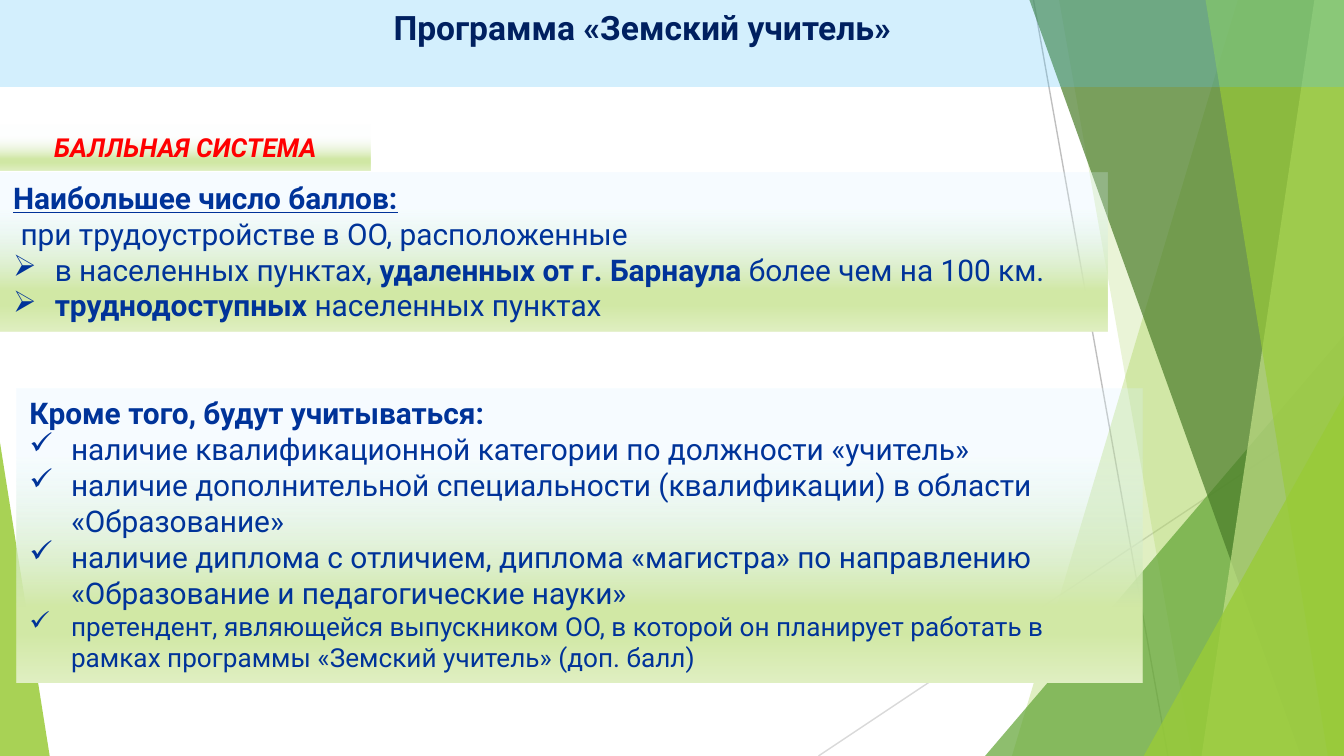
from lxml import etree
from pptx import Presentation
from pptx.dml.color import RGBColor
from pptx.enum.shapes import MSO_CONNECTOR, MSO_SHAPE
from pptx.enum.text import MSO_ANCHOR, MSO_AUTO_SIZE, PP_ALIGN
from pptx.oxml.ns import qn
from pptx.util import Inches, Pt

STRAIGHT = MSO_CONNECTOR.STRAIGHT
RECTANGLE = MSO_SHAPE.RECTANGLE
TRIANGLE = MSO_SHAPE.ISOSCELES_TRIANGLE
TOP = MSO_ANCHOR.TOP
GROW = MSO_AUTO_SIZE.SHAPE_TO_FIT_TEXT
LEFT, CENTER = PP_ALIGN.LEFT, PP_ALIGN.CENTER

LIME, GREEN, FOREST, PALE = "99CB38", "63A537", "4A7C29", "C2E088"
SKY, NAVY, BLUE, RED = "51C3F9", "002060", "003399", "FF0000"
MEADOW = [(74, "D1E8A5", 100), (83, "D1E8A5", 100), (100, "E0EFC3", 100)]
PANEL_FADE = [(23, "DCF3FE", 25)] + MEADOW
LABEL_FADE = [(24, "F8FCFD", 13)] + MEADOW
ARROW, CHECK = "➢", "✓"


def rgb(value):
    return RGBColor.from_string(value)


class SlideKit:
    font = "Roboto"
    indent = Inches(0.31)

    def __init__(self, deck):
        self.width, self.height = deck.slide_width, deck.slide_height
        self.slide = deck.slides.add_slide(deck.slide_layouts[6])
        self.shapes = self.slide.shapes

    def x(self, percent):
        return round(self.width * percent / 100)

    def y(self, percent):
        return round(self.height * percent / 100)

    def place(self, left, top, width, height):
        return self.x(left), self.y(top), self.x(width), self.y(height)

    def line(self, start, end, color):
        rule = self.shapes.add_connector(
            STRAIGHT, self.x(start[0]), self.y(start[1]), self.x(end[0]), self.y(end[1]))
        rule.line.color.rgb = rgb(color)
        rule.line.width = Pt(0.75)
        etree.SubElement(rule._element.spPr, qn("a:effectLst"))

    def paint(self, shape, color, opacity):
        shape.shadow.inherit = False
        shape.line.fill.background()
        shape.fill.solid()
        shape.fill.fore_color.rgb = rgb(color)
        tint = shape._element.spPr.find(qn("a:solidFill"))[0]
        etree.SubElement(tint, qn("a:alpha"), val=str(opacity * 1000))

    def band(self, top_x, bottom_x, color, opacity):
        outline = self.shapes.build_freeform(self.x(top_x), 0)
        corners = [(100, 0), (100, 100), (bottom_x, 100)]
        outline.add_line_segments([(self.x(x), self.y(y)) for x, y in corners])
        self.paint(outline.convert_to_shape(), color, opacity)

    def triangle(self, box, apex, color, opacity):
        facet = self.shapes.add_shape(TRIANGLE, *self.place(*box))
        facet.adjustments[0] = apex
        self.paint(facet, color, opacity)

    def bar(self, box, color, opacity):
        self.paint(self.shapes.add_shape(RECTANGLE, *self.place(*box)), color, opacity)

    def fade(self, shape, stops):
        shape.fill.gradient()
        shape.fill.gradient_angle = 270
        ramp = shape._element.spPr.find(qn("a:gradFill")).find(qn("a:gsLst"))
        for old in list(ramp):
            ramp.remove(old)
        for position, color, opacity in stops:
            stop = etree.SubElement(ramp, qn("a:gs"), pos=str(position * 1000))
            tint = etree.SubElement(stop, qn("a:srgbClr"), val=color)
            etree.SubElement(tint, qn("a:alpha"), val=str(opacity * 1000))

    def add_text(self, frame, paragraphs, color, align):
        frame.word_wrap = True
        frame.vertical_anchor = TOP
        for index, (bullet, size, runs) in enumerate(paragraphs):
            paragraph = frame.add_paragraph() if index else frame.paragraphs[0]
            paragraph.alignment = align
            if bullet:
                props = paragraph._p.get_or_add_pPr()
                props.set("marL", str(self.indent))
                props.set("indent", str(-self.indent))
                etree.SubElement(props, qn("a:buChar"), char=bullet)
            for text, style in runs:
                run = paragraph.add_run()
                run.text = text
                run.font.name = self.font
                run.font.size = Pt(size)
                run.font.color.rgb = rgb(color)
                run.font.bold = "b" in style
                run.font.italic = "i" in style
                run.font.underline = "u" in style

    def heading(self, box, paragraphs, color):
        frame = self.shapes.add_textbox(*self.place(*box)).text_frame
        self.add_text(frame, paragraphs, color, CENTER)

    def panel(self, box, stops, paragraphs, color, align=LEFT):
        block = self.shapes.add_shape(RECTANGLE, *self.place(*box))
        block.shadow.inherit = False
        block.line.fill.background()
        self.fade(block, stops)
        self.add_text(block.text_frame, paragraphs, color, align)
        block.text_frame.auto_size = GROW


def main():
    deck = Presentation()
    deck.slide_width, deck.slide_height = Inches(10), Inches(5.625)
    kit = SlideKit(deck)

    kit.line((76.9, 0), (86.9, 100), "BFBFBF")
    kit.line((100, 53.7), (60.9, 100), "D9D9D9")
    kit.band(92.1, 75.3, LIME, 30)
    kit.band(78.8, 88.7, LIME, 20)
    kit.triangle((73.3, 44.4, 26.7, 55.6), 1, GREEN, 72)
    kit.band(76.6, 96.8, FOREST, 70)
    kit.band(97.8, 89.4, PALE, 70)
    kit.band(89.7, 98.8, LIME, 65)
    kit.triangle((85.1, 52.3, 14.9, 47.7), 1, LIME, 80)
    kit.triangle((0, 58.5, 3.7, 41.5), 0, LIME, 85)

    kit.bar((0, 0, 100.5, 11.5), SKY, 25)
    kit.heading((-2.2, 0, 100, 9.8), [("", 18, [("Программа «Земский учитель»", "b")])], NAVY)
    kit.panel((0, 16.5, 27.6, 6.1), LABEL_FADE,
              [("", 14, [("БАЛЛЬНАЯ СИСТЕМА", "bi")])], RED, CENTER)

    extra_criteria = [
        ("", 16, [("Кроме того, будут учитываться:", "b")]),
        (CHECK, 16, [("наличие квалификационной категории по должности «учитель»", "")]),
        (CHECK, 16, [("наличие дополнительной специальности (квалификации) "
                      "в области «Образование»", "")]),
        (CHECK, 16, [("наличие диплома с отличием, диплома «магистра» по направлению "
                      "«Образование и педагогические науки»", "")]),
        (CHECK, 14, [("претендент, являющейся выпускником ОО, в которой он планирует "
                      "работать в рамках программы «Земский учитель» (доп. балл)", "")]),
    ]
    kit.panel((1.2, 51.4, 83.8, 38.9), PANEL_FADE, extra_criteria, BLUE)

    top_scores = [
        ("", 16, [("Наибольшее число баллов:", "bu")]),
        ("", 16, [(" ", "b"), ("при трудоустройстве в ОО, расположенные", "")]),
        (ARROW, 16, [("в населенных пунктах, ", ""), ("удаленных от г. Барнаула ", "b"),
                     ("более чем на 100 км.", "")]),
        (ARROW, 16, [("труднодоступных", "b"), (" населенных пунктах", "")]),
    ]
    kit.panel((0, 22.9, 82.4, 21), PANEL_FADE, top_scores, BLUE)

    deck.save("out.pptx")


if __name__ == "__main__":
    main()
